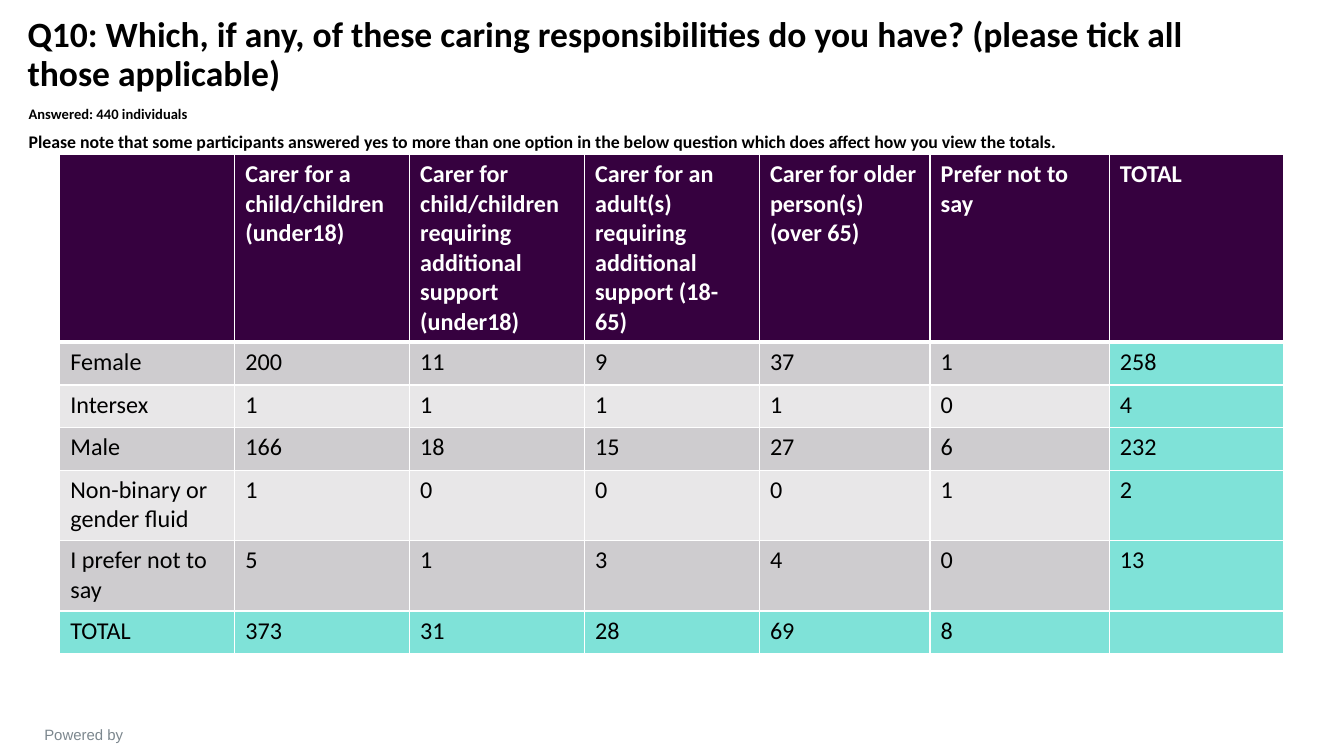
from lxml.etree import SubElement
from pptx import Presentation
from pptx.dml.color import RGBColor
from pptx.enum.text import MSO_ANCHOR, PP_ALIGN
from pptx.oxml.ns import qn
from pptx.util import Inches, Pt

SLIDE_WIDTH, SLIDE_HEIGHT = Inches(12.6), Inches(7.09)
BLACK = RGBColor(0x00, 0x00, 0x00)
WHITE = RGBColor(0xFF, 0xFF, 0xFF)
GREY = RGBColor(0x7C, 0x87, 0x8E)
PURPLE = RGBColor(0x36, 0x01, 0x3F)
TURQUOISE = RGBColor(0x7F, 0xE2, 0xD8)
BANDS = (RGBColor(0xCE, 0xCC, 0xCF), RGBColor(0xE8, 0xE7, 0xE8))

TITLE = ("Q10: Which, if any, of these caring responsibilities do you have? "
         "(please tick all those applicable)")
ANSWERED = "Answered: 440 individuals"
NOTE = ("Please note that some participants answered yes to more than one option "
        "in the below question which does affect how you view the totals.")
CARERS = [
    ("", "Carer for a child/children (under18)",
     "Carer for child/children requiring additional support (under18)",
     "Carer for an adult(s) requiring additional support (18-65)",
     "Carer for older person(s) (over 65)", "Prefer not to say", "TOTAL"),
    ("Female", 200, 11, 9, 37, 1, 258),
    ("Intersex", 1, 1, 1, 1, 0, 4),
    ("Male", 166, 18, 15, 27, 6, 232),
    ("Non-binary or gender fluid", 1, 0, 0, 0, 1, 2),
    ("I prefer not to say", 5, 1, 3, 4, 0, 13),
    ("TOTAL", 373, 31, 28, 69, 8, ""),
]
COLUMN_WIDTHS = (1.64, 1.64, 1.64, 1.64, 1.6, 1.68, 1.64)
ROW_HEIGHTS = (1.76, 0.4, 0.4, 0.4, 0.66, 0.66, 0.4)


def write(paragraph, text, size, color=BLACK, bold=False, font="Calibri",
          align=PP_ALIGN.LEFT, line_spacing=None, space_before=None):
    paragraph.alignment = align
    if line_spacing is not None:
        paragraph.line_spacing = line_spacing
    if space_before is not None:
        paragraph.space_before = Pt(space_before)
    run = paragraph.add_run()
    run.text = text
    run.font.name = font
    run.font.size = Pt(size)
    run.font.bold = bold
    run.font.color.rgb = color


def add_text_frame(slide, left, top, width, height, inset_x=0.1, inset_y=0.05):
    box = slide.shapes.add_textbox(*map(Inches, (left, top, width, height)))
    frame = box.text_frame
    frame.word_wrap = True
    frame.vertical_anchor = MSO_ANCHOR.TOP
    frame.margin_left = frame.margin_right = Inches(inset_x)
    frame.margin_top = frame.margin_bottom = Inches(inset_y)
    return frame


def set_borders(cell, top, bottom):
    """Draw white borders, with the top and bottom widths in points."""
    properties = cell._tc.get_or_add_tcPr()
    for side, width in (("L", 1), ("R", 1), ("T", top), ("B", bottom)):
        line = SubElement(properties, qn(f"a:ln{side}"), w=str(Pt(width)))
        fill = SubElement(line, qn("a:solidFill"))
        SubElement(fill, qn("a:srgbClr"), val=str(WHITE))


def cell_color(row, column):
    if row == 0:
        return PURPLE
    if row == len(ROW_HEIGHTS) - 1 or column == len(COLUMN_WIDTHS) - 1:
        return TURQUOISE
    return BANDS[(row - 1) % 2]


def add_carers_table(slide, left, top):
    table = slide.shapes.add_table(
        len(ROW_HEIGHTS), len(COLUMN_WIDTHS), Inches(left), Inches(top),
        Inches(sum(COLUMN_WIDTHS)), Inches(sum(ROW_HEIGHTS))).table
    for column, width in zip(table.columns, COLUMN_WIDTHS):
        column.width = Inches(width)
    for row, height in zip(table.rows, ROW_HEIGHTS):
        row.height = Inches(height)
    for row, values in enumerate(CARERS):
        header = row == 0
        for column, value in enumerate(values):
            cell = table.cell(row, column)
            set_borders(cell, top=3 if row == 1 else 1, bottom=3 if header else 1)
            cell.fill.solid()
            cell.fill.fore_color.rgb = cell_color(row, column)
            if value != "":
                write(cell.text_frame.paragraphs[0], str(value), 16.3,
                      color=WHITE if header else BLACK, bold=header)


def main():
    presentation = Presentation()
    presentation.slide_width, presentation.slide_height = SLIDE_WIDTH, SLIDE_HEIGHT
    slide = presentation.slides.add_slide(presentation.slide_layouts[6])

    footer = add_text_frame(slide, 0.06, 6.74, 1.45, 0.22, 0.13, 0.06)
    write(footer.paragraphs[0], "Powered by", 10.1, color=GREY, font="Arial",
          align=PP_ALIGN.CENTER)

    title = add_text_frame(slide, 0.16, 0.11, 11.34, 0.76)
    write(title.paragraphs[0], TITLE, 24, bold=True, line_spacing=0.9)

    notes = add_text_frame(slide, 0.17, 0.98, 12.4, 0.49)
    write(notes.paragraphs[0], ANSWERED, 9.8, bold=True, line_spacing=0.7)
    write(notes.add_paragraph(), NOTE, 12, bold=True, line_spacing=0.7,
          space_before=10)

    add_carers_table(slide, 0.56, 1.45)
    presentation.save("out.pptx")


if __name__ == "__main__":
    main()
